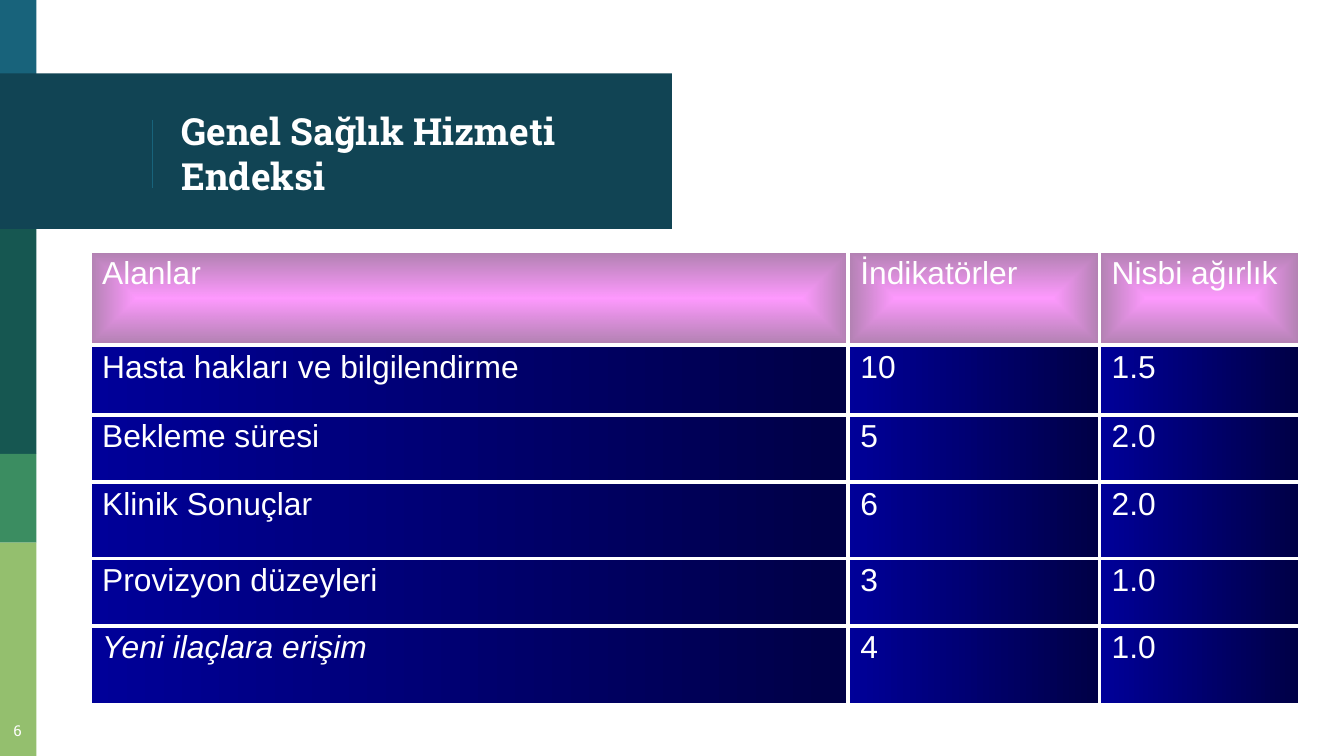
"""Build the slide with the health index table."""
import pptx
import pptx.dml.color
import pptx.enum.shapes
import pptx.enum.text
import pptx.oxml
import pptx.oxml.ns
import pptx.util
from lxml import etree

Cm = pptx.util.Cm
Pt = pptx.util.Pt
qn = pptx.oxml.ns.qn
ALIGN = pptx.enum.text.PP_ALIGN
ANCHOR = pptx.enum.text.MSO_ANCHOR

STRIPS = [
    (0, 0, 0.69, 1.47, "18637B"),
    (0, 1.39, 12.7, 2.94, "114454"),
    (0, 4.33, 0.69, 4.25, "165751"),
    (0, 8.58, 0.69, 1.68, "3B8D61"),
    (0, 10.26, 0.69, 4.03, "94BF6E"),
]
ROWS = [
    ("Alanlar", "İndikatörler", "Nisbi ağırlık"),
    ("Hasta hakları ve bilgilendirme", "10", "1.5"),
    ("Bekleme süresi", "5", "2.0"),
    ("Klinik Sonuçlar", "6", "2.0"),
    ("Provizyon düzeyleri", "3", "1.0"),
    ("Yeni ilaçlara erişim", "4", "1.0"),
]
COL_WIDTHS = [14.33, 4.75, 3.78]
ROW_HEIGHTS = [1.77, 1.32, 1.27, 1.45, 1.27, 1.5]
HEADER = {"colors": ("FF4FFF", "762476"), "alpha": 57, "shape": True}
BODY = {"colors": ("000099", "000046"), "alpha": 100, "shape": False}


def rgb(value):
    """Turn a hex string into a colour."""
    return pptx.dml.color.RGBColor.from_string(value)


def set_all(obj, values):
    """Set every attribute named in a dict."""
    for name, value in values.items():
        setattr(obj, name, value)


class Deck:
    """Hold the style and the current slide."""

    title_font = "Roboto Slab"
    table_font = "Arial"
    white = "FFFFFF"

    def __init__(self, prs):
        """Start a title-only slide."""
        self.s = prs.slides.add_slide(prs.slide_layouts[5])

    def text(self, tf, text, font, align=ALIGN.LEFT):
        """Write one formatted paragraph."""
        p = tf.paragraphs[0]
        p.alignment = align
        r = p.add_run()
        r.text = text
        set_all(r.font, font)
        r.font.color.rgb = rgb(self.white)
        return p

    def frame(self, tf, anchor):
        """Give a text frame its wrap, anchor and margins."""
        set_all(tf, {"word_wrap": True, "auto_size": pptx.enum.text.MSO_AUTO_SIZE.NONE,
                     "vertical_anchor": anchor, "margin_left": Cm(0.25), "margin_right": Cm(0.25),
                     "margin_top": Cm(0.25), "margin_bottom": Cm(0.25)})

    def rect(self, x, y, w, h, color):
        """Add a plain filled rectangle."""
        sp = self.s.shapes.add_shape(pptx.enum.shapes.MSO_SHAPE.RECTANGLE, Cm(x), Cm(y), Cm(w), Cm(h))
        sp.shadow.inherit = False
        sp.fill.solid()
        sp.fill.fore_color.rgb = rgb(color)
        sp.line.fill.background()

    def line(self, x1, y1, x2, y2, color, width):
        """Add a straight line without shadow."""
        cn = self.s.shapes.add_connector(
            pptx.enum.shapes.MSO_CONNECTOR.STRAIGHT, Cm(x1), Cm(y1), Cm(x2), Cm(y2))
        cn.line.color.rgb = rgb(color)
        cn.line.width = Pt(width)
        etree.SubElement(cn._element.spPr, qn("a:effectLst"))

    def title(self, x, y, w, h, text):
        """Place the title above the shapes drawn so far."""
        sp = self.s.shapes.title
        set_all(sp, {"left": Cm(x), "top": Cm(y), "width": Cm(w), "height": Cm(h)})
        self.frame(sp.text_frame, ANCHOR.MIDDLE)
        self.text(sp.text_frame, text, {"name": self.title_font, "size": Pt(20), "bold": True})
        sp._element.getparent().append(sp._element)

    def number(self, x, y, w, h, text):
        """Add the centred page number."""
        tf = self.s.shapes.add_textbox(Cm(x), Cm(y), Cm(w), Cm(h)).text_frame
        self.frame(tf, ANCHOR.TOP)
        self.text(tf, text, {"name": self.title_font, "size": Pt(8)}, ALIGN.CENTER)

    def cell_look(self, cell, colors, alpha, shape):
        """Give a cell white borders and a gradient that darkens."""
        tc_pr = cell._tc.get_or_add_tcPr()
        for side in ("lnL", "lnR", "lnT", "lnB"):
            ln = etree.SubElement(tc_pr, qn(f"a:{side}"), w=str(Pt(2.25)))
            fill = etree.SubElement(ln, qn("a:solidFill"))
            etree.SubElement(fill, qn("a:srgbClr"), val=self.white)
        grad = etree.SubElement(tc_pr, qn("a:gradFill"), rotWithShape="0")
        stops = etree.SubElement(grad, qn("a:gsLst"))
        for pos, color in zip(("0", "100000"), colors):
            gs = etree.SubElement(stops, qn("a:gs"), pos=pos)
            clr = etree.SubElement(gs, qn("a:srgbClr"), val=color)
            if alpha < 100:
                etree.SubElement(clr, qn("a:alpha"), val=str(alpha * 1000))
        if shape:
            way = etree.SubElement(grad, qn("a:path"), path="shape")
            etree.SubElement(way, qn("a:fillToRect"), l="50000", t="50000", r="50000", b="50000")
        else:
            etree.SubElement(grad, qn("a:lin"), ang="0", scaled="1")

    def table(self, x, y, widths, heights, rows):
        """Add the table with a header row and an italic last label."""
        tbl = self.s.shapes.add_table(
            len(rows), len(widths), Cm(x), Cm(y), Cm(sum(widths)), Cm(sum(heights))).table
        set_all(tbl, {"first_row": False, "horz_banding": False})
        for col, width in zip(tbl.columns, widths):
            col.width = Cm(width)
        for i, (row, height) in enumerate(zip(rows, heights)):
            tbl.rows[i].height = Cm(height)
            for j, text in enumerate(row):
                cell = tbl.cell(i, j)
                set_all(cell, {"margin_left": Cm(0.23), "margin_right": Cm(0.23),
                               "margin_top": Cm(0.08), "margin_bottom": Cm(0.08)})
                italic = i == len(rows) - 1 and j == 0
                p = self.text(cell.text_frame, text, {"name": self.table_font, "size": Pt(17),
                                                      "bold": False, "italic": italic})
                before = etree.SubElement(p._p.get_or_add_pPr(), qn("a:spcBef"))
                etree.SubElement(before, qn("a:spcPct"), val="20000")
                self.cell_look(cell, **(BODY if i else HEADER))


def main():
    """Build and save the slide."""
    prs = pptx.Presentation()
    set_all(prs, {"slide_width": Cm(25.4), "slide_height": Cm(14.29)})
    deck = Deck(prs)
    for strip in STRIPS:
        deck.rect(*strip)
    deck.line(2.88, 2.26, 2.88, 3.56, "18637B", 0.75)
    deck.title(3.18, 1.47, 8.92, 2.86, "Genel Sağlık Hizmeti Endeksi")
    deck.number(-0.15, 13.39, 0.97, 0.89, "6")
    deck.table(1.7, 4.75, COL_WIDTHS, ROW_HEIGHTS, ROWS)
    prs.save("out.pptx")


if __name__ == "__main__":
    main()
